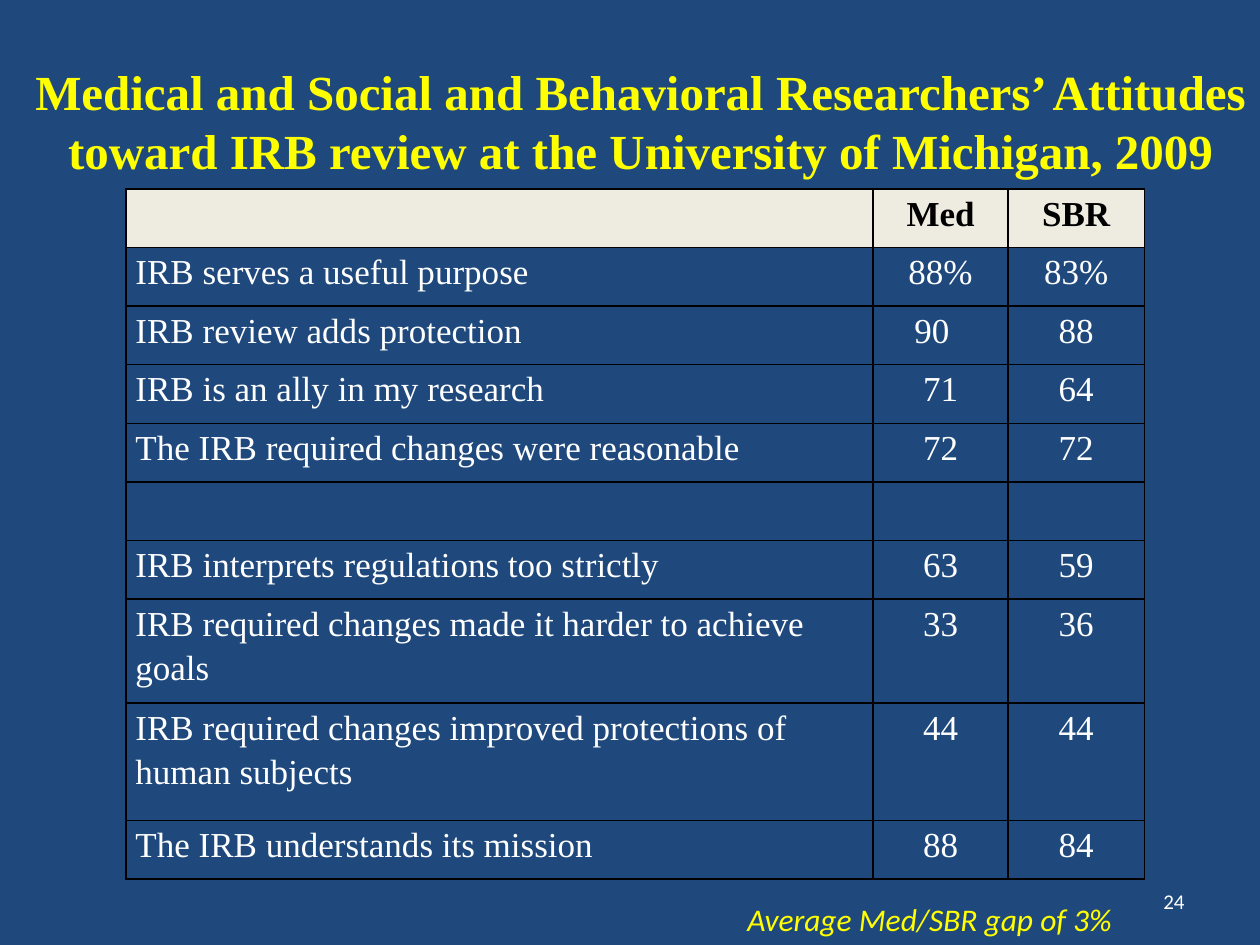
from lxml import etree
from pptx import Presentation
from pptx.dml.color import RGBColor
from pptx.enum.text import MSO_ANCHOR, PP_ALIGN
from pptx.oxml.ns import qn
from pptx.util import Pt

LEFT, CENTER, RIGHT = PP_ALIGN.LEFT, PP_ALIGN.CENTER, PP_ALIGN.RIGHT
TOP, MIDDLE = MSO_ANCHOR.TOP, MSO_ANCHOR.MIDDLE
SERIF, SANS = "Times New Roman", "Calibri"
COLORS = {
    "background": "1F497D",
    "header": "EEECE1",
    "border": "000000",
    "header_text": "000000",
    "body_text": "FFFFFF",
    "accent": "FFFF00",
}

TITLE = [
    "Medical and Social and Behavioral Researchers’ Attitudes",
    "toward IRB review at the University of Michigan, 2009",
]
ATTITUDES = [
    ("", "Med", "SBR"),
    ("IRB serves a useful purpose", "88%", "83%"),
    ("IRB review adds protection", "90", "88"),
    ("IRB is an ally in my research", "71", "64"),
    ("The IRB required changes were reasonable", "72", "72"),
    ("", "", ""),
    ("IRB interprets regulations too strictly", "63", "59"),
    ("IRB required changes made it harder to achieve goals", "33", "36"),
    ("IRB required changes improved protections of human subjects", "44", "44"),
    ("The IRB understands its mission", "88", "84"),
]
COLUMN_WIDTHS = [427, 77, 78]
ROW_HEIGHT = 33.5
TALL_ROWS = {7: 59.5, 8: 67}  # statements that take two lines


def color(name):
    return RGBColor.from_string(COLORS[name])


def style_paragraph(paragraph, font, size, color_name, align=LEFT,
                    bold=False, italic=False):
    paragraph.alignment = align
    for run in paragraph.runs:
        run.font.name = font
        run.font.size = Pt(size)
        run.font.color.rgb = color(color_name)
        run.font.bold = bold
        run.font.italic = italic


def add_text(slide, lines, left, top, width, height, font, size, color_name,
             anchor=TOP, **style):
    box = slide.shapes.add_textbox(Pt(left), Pt(top), Pt(width), Pt(height))
    frame = box.text_frame
    frame.word_wrap = True
    frame.vertical_anchor = anchor
    frame.text = "\n".join(lines)
    for paragraph in frame.paragraphs:
        style_paragraph(paragraph, font, size, color_name, **style)
    return frame


def add_borders(cell):
    properties = cell._tc.get_or_add_tcPr()
    # Border lines come before the fill in the cell properties
    for position, side in enumerate(("a:lnL", "a:lnR", "a:lnT", "a:lnB")):
        line = etree.Element(qn(side), w=str(Pt(1)))
        fill = etree.SubElement(line, qn("a:solidFill"))
        etree.SubElement(fill, qn("a:srgbClr"), val=COLORS["border"])
        properties.insert(position, line)


def fill_cell(cell, text, is_header, align):
    cell.margin_left = cell.margin_right = Pt(5.4)
    cell.margin_top = cell.margin_bottom = 0
    if is_header:
        cell.fill.solid()
        cell.fill.fore_color.rgb = color("header")
    else:
        cell.fill.background()
    add_borders(cell)
    cell.text_frame.text = text
    paragraph = cell.text_frame.paragraphs[0]
    paragraph.line_spacing = 1.15
    style_paragraph(paragraph, SERIF, 20,
                    "header_text" if is_header else "body_text",
                    align=align, bold=is_header)


def add_attitude_table(slide, left, top):
    heights = [TALL_ROWS.get(i, ROW_HEIGHT) for i in range(len(ATTITUDES))]
    table = slide.shapes.add_table(
        len(ATTITUDES), len(COLUMN_WIDTHS), Pt(left), Pt(top),
        Pt(sum(COLUMN_WIDTHS)), Pt(sum(heights))).table
    table.first_row = table.horz_banding = False
    for column, width in zip(table.columns, COLUMN_WIDTHS):
        column.width = Pt(width)
    for i, (row, height) in enumerate(zip(ATTITUDES, heights)):
        table.rows[i].height = Pt(height)
        for j, text in enumerate(row):
            fill_cell(table.cell(i, j), text, i == 0, CENTER if j else LEFT)
    # The 90 sits a little left of its column's centre
    table.cell(2, 1).margin_right = Pt(15.4)


def main():
    prs = Presentation()
    prs.slide_width, prs.slide_height = Pt(720), Pt(540)
    slide = prs.slides.add_slide(prs.slide_layouts[6])
    slide.background.fill.solid()
    slide.background.fill.fore_color.rgb = color("background")

    # Slide number
    add_text(slide, ["24"], 516, 500.5, 168, 28.75, SANS, 12, "body_text",
             anchor=MIDDLE, align=RIGHT)

    # Survey results
    add_attitude_table(slide, 72, 108)

    # Title, raised above the table by its bottom margin
    title = add_text(slide, TITLE, 12, 31, 708, 97, SERIF, 28, "accent",
                     anchor=MIDDLE, align=CENTER, bold=True)
    title.margin_bottom = Pt(25)

    # Summary of the gap
    add_text(slide, ["Average Med/SBR gap of 3%"], 420, 511, 234, 29, SANS, 18,
             "accent", italic=True)

    prs.save("out.pptx")


if __name__ == "__main__":
    main()
